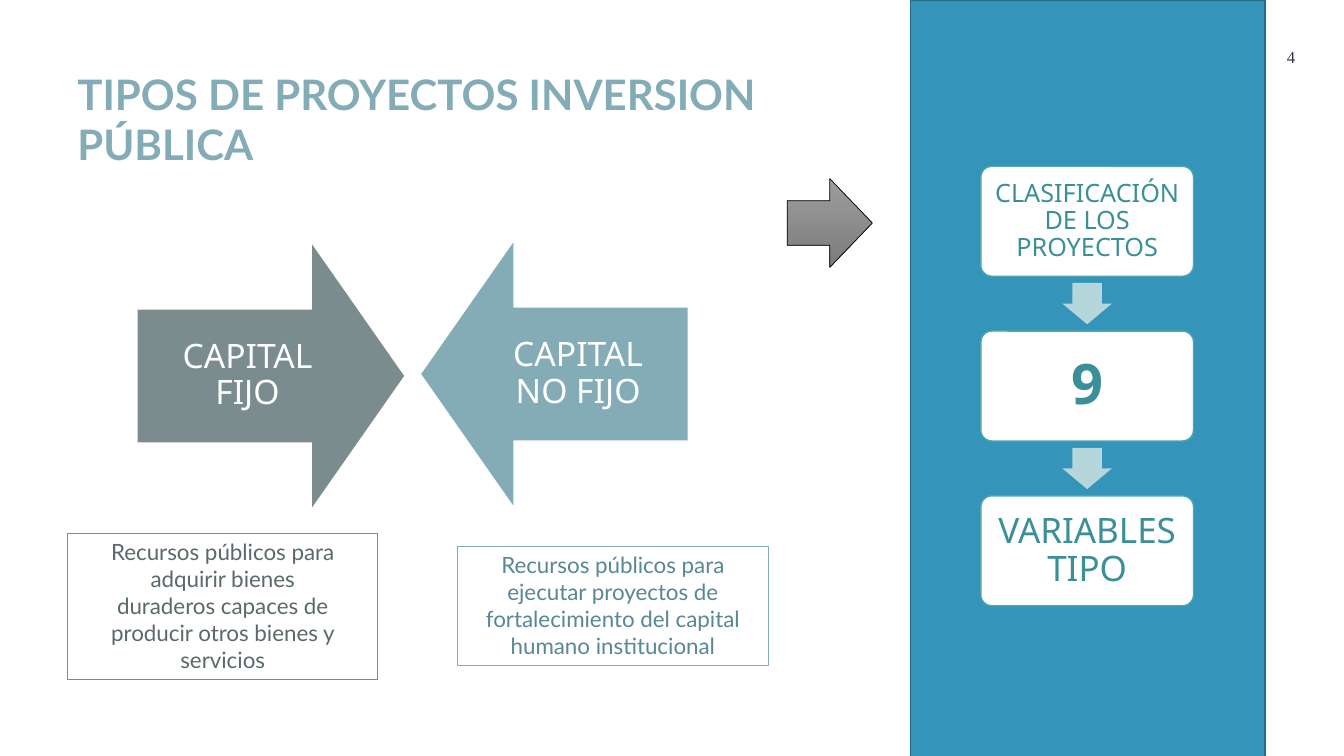
from pptx import Presentation
from pptx.dml.color import RGBColor
from pptx.enum import shapes, text
from pptx.util import Pt

# Content
TITLE = "TIPOS DE PROYECTOS INVERSION PÚBLICA"
PAGE_NUMBER = "4"
CAPITALS = [  # label, arrow kind, colour, arrow left and top, label left
    ("CAPITAL FIJO", "RIGHT_ARROW", "slate", 97.9, 172.8, 97.9),
    ("CAPITAL NO FIJO", "LEFT_ARROW", "mist", 300.2, 171.4, 334.1),
]
RESOURCES = [  # paragraphs, line colour, text colour, left, top, height
    (["Recursos públicos para adquirir bienes",
      "duraderos capaces de producir otros bienes y servicios"],
     "slate", "slate_text", 48.2, 380.9, 104.4),
    (["Recursos públicos para ejecutar proyectos de "
      "fortalecimiento del capital humano institucional"],
     "mist", "mist_text", 326.9, 390.2, 85),
]
STEPS = [  # label, size, bold, inset
    ("CLASIFICACIÓN DE LOS PROYECTOS", 18, False, 5),
    ("9", 40, True, 12),
    ("VARIABLES TIPO", 25, False, 7.2),
]

THEME = {
    "colors": {
        "white": "FFFFFF", "black": "000000", "ink": "373545",
        "panel": "3494BA", "panel_edge": "266D8A",
        "slate": "7A8C8E", "slate_text": "5B696B",
        "mist": "84ACB6", "mist_text": "588894",
        "step_edge": "50A5AE", "step_text": "3A8F98", "step_arrow": "B5D7DC",
        "gray_top": "9D9D9D", "gray_bottom": "7C7C7C",
    },
    "fonts": {"body": "Lato", "diagram": "Noto Sans", "number": "Times New Roman"},
    "sizes": {"title": 30, "capital": 24, "resource": 16, "number": 12},
}
SIZES = THEME["sizes"]

deck = Presentation()
deck.slide_width, deck.slide_height = Pt(960), Pt(540)
page = deck.slides.add_slide(deck.slide_layouts[6])


def color(name):
    return RGBColor.from_string(THEME["colors"][name])


def add_shape(kind, place, fill=None, line=None, width=1, adjust=()):
    shape = page.shapes.add_shape(getattr(shapes.MSO_SHAPE, kind), *map(Pt, place))
    shape.shadow.inherit = False
    if fill:
        shape.fill.solid()
        shape.fill.fore_color.rgb = color(fill)
    if line:
        shape.line.color.rgb = color(line)
        shape.line.width = Pt(width)
    else:
        shape.line.fill.background()
    for index, value in enumerate(adjust):
        shape.adjustments[index] = value
    return shape


def write(shape, lines, size, font, ink, bold=False, align="CENTER",
          anchor="TOP", inset=(7.2, 3.6), spacing=1.0):
    frame = shape.text_frame
    across, down = inset
    frame_format = {
        "word_wrap": True, "vertical_anchor": getattr(text.MSO_ANCHOR, anchor),
        "margin_left": Pt(across), "margin_right": Pt(across),
        "margin_top": Pt(down), "margin_bottom": Pt(down),
    }
    for name, value in frame_format.items():
        setattr(frame, name, value)
    span_format = {"size": Pt(size), "name": THEME["fonts"][font], "bold": bold}
    for index, line in enumerate(lines):
        para = frame.add_paragraph() if index else frame.paragraphs[0]
        para.alignment = getattr(text.PP_ALIGN, align)
        para.line_spacing = spacing
        span = para.add_run()
        span.text = line
        for name, value in span_format.items():
            setattr(span.font, name, value)
        span.font.color.rgb = color(ink)


def add_text(place, *args, **options):
    write(page.shapes.add_textbox(*map(Pt, place)), *args, **options)


# Page number, side panel and title
add_text((893.5, 33.1, 57.6, 14.4), [PAGE_NUMBER], SIZES["number"], "number",
         "ink", inset=(7.2, 0))
add_shape("FLOWCHART_PROCESS", (650.2, 0, 253.4, 541.4), "panel", "panel_edge")
add_text((48.2, 45.4, 600.5, 79.9), [TITLE], SIZES["title"], "body", "mist",
         bold=True, align="LEFT")

# Facing arrows: each label sits on the arrow's shaft, half the arrow's height
ARROW = 191.5
for label, kind, fill, left, top, label_left in CAPITALS:
    add_shape(kind, (left, top, ARROW, ARROW), fill, "white", adjust=(0.5, 0.35))
    add_text((label_left, top + ARROW / 4, 157.7, ARROW / 2), [label],
             SIZES["capital"], "diagram", "white", anchor="MIDDLE",
             inset=(13.7, 13.7), spacing=0.9)

# Descriptions under the arrows
for lines, edge, ink, left, top, height in RESOURCES:
    box = add_shape("RECTANGLE", (left, top, 221.8, height), "white", edge, 0.75)
    write(box, lines, SIZES["resource"], "body", ink)

# Steps in the panel, with an arrow centred in each gap
STEP_LEFT, STEP_TOP, STEP_WIDTH, STEP_HEIGHT, PITCH = 700.6, 118.8, 151.9, 78.5, 117.7
DOWN_WIDTH, DOWN_HEIGHT = 35.3, 29.5
for index, (label, size, bold, inset) in enumerate(STEPS):
    top = STEP_TOP + index * PITCH
    if index:
        gap_middle = top - (PITCH - STEP_HEIGHT) / 2
        add_shape("DOWN_ARROW",
                  (STEP_LEFT + (STEP_WIDTH - DOWN_WIDTH) / 2,
                   gap_middle - DOWN_HEIGHT / 2, DOWN_WIDTH, DOWN_HEIGHT),
                  "step_arrow", adjust=(0.6, 0.5))
    step = add_shape("ROUNDED_RECTANGLE", (STEP_LEFT, top, STEP_WIDTH, STEP_HEIGHT),
                     "white", "step_edge", adjust=(0.1,))
    write(step, [label], size, "diagram", "step_text", bold=bold, anchor="MIDDLE",
          inset=(inset, inset), spacing=0.9)

# Gray arrow pointing to the panel
pointer = add_shape("RIGHT_ARROW", (562.3, 127.6, 60.8, 63.4), line="black", width=0.5)
pointer.fill.gradient()
pointer.fill.gradient_angle = 270
for stop, name in zip(pointer.fill.gradient_stops, ("gray_top", "gray_bottom")):
    stop.color.rgb = color(name)

deck.save("out.pptx")
